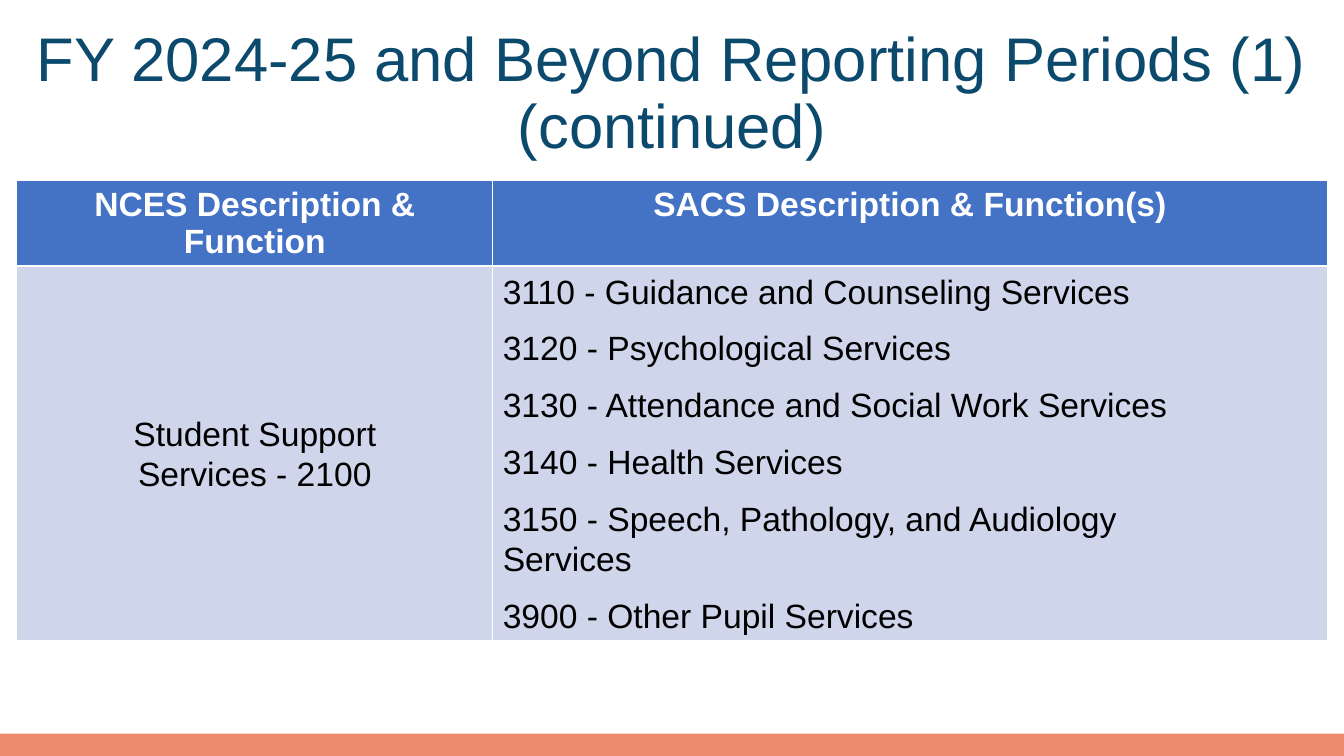
"""Build the slide that maps NCES student support to SACS functions."""
import pptx
import pptx.dml.color
import pptx.enum.shapes
import pptx.enum.text
import pptx.util

Pt = pptx.util.Pt
RGBColor = pptx.dml.color.RGBColor
ALIGN = pptx.enum.text.PP_ALIGN
ANCHOR = pptx.enum.text.MSO_ANCHOR

NAVY = RGBColor(0x0C, 0x4A, 0x6D)
CORAL = RGBColor(0xED, 0x8B, 0x6F)
BLUE = RGBColor(0x44, 0x72, 0xC4)
PALE = RGBColor(0xCF, 0xD5, 0xEA)
WHITE = RGBColor(0xFF, 0xFF, 0xFF)
BLACK = RGBColor(0x00, 0x00, 0x00)

WIDTH, HEIGHT = 960, 540
LEFT, SPAN = 12, 936
INDENT = 72

HEADS = ["NCES Description & Function", "SACS Description & Function(s)"]
SUPPORT = "Student Support Services - 2100"
DUTIES = [
    "3110 - Guidance and Counseling Services",
    "3120 - Psychological Services",
    "3130 - Attendance and Social Work Services",
    "3140 - Health Services",
    "3150 - Speech, Pathology, and Audiology Services",
    "3900 - Other Pupil Services",
]


def add_run(para, text, size, color, bold=False):
    run = para.add_run()
    run.text = text
    run.font.name = "Arial"
    run.font.size = Pt(size)
    run.font.bold = bold
    run.font.color.rgb = color


def add_bar(slide):
    bar = slide.shapes.add_shape(
        pptx.enum.shapes.MSO_SHAPE.RECTANGLE, Pt(0), Pt(524), Pt(WIDTH), Pt(16))
    bar.shadow.inherit = False
    bar.fill.solid()
    bar.fill.fore_color.rgb = CORAL
    bar.line.fill.background()


def set_title(slide, text):
    title = slide.shapes.title
    title.left, title.top = Pt(LEFT), Pt(16)
    title.width, title.height = Pt(SPAN), Pt(104)
    frame = title.text_frame
    frame.word_wrap = True
    frame.auto_size = pptx.enum.text.MSO_AUTO_SIZE.NONE
    frame.vertical_anchor = ANCHOR.MIDDLE
    para = frame.paragraphs[0]
    para.alignment = ALIGN.CENTER
    para.line_spacing = 0.9
    add_run(para, text, 44, NAVY)


def fill_cell(cell, lines, fill, color, align=ALIGN.CENTER, bold=False,
              spacing=1.0, after=0, left=0, right=0):
    cell.fill.solid()
    cell.fill.fore_color.rgb = fill
    frame = cell.text_frame
    for index, line in enumerate(lines):
        para = frame.add_paragraph() if index else frame.paragraphs[0]
        para.alignment = align
        para.line_spacing = spacing
        para.space_after = Pt(after)
        props = para._p.get_or_add_pPr()
        props.set("marL", str(Pt(left)))
        props.set("marR", str(Pt(right)))
        add_run(para, line, 24, color, bold)


def add_grid(slide):
    grid = slide.shapes.add_table(
        2, 2, Pt(LEFT), Pt(129), Pt(SPAN), Pt(328)).table
    for column, width in zip(grid.columns, (340, 596)):
        column.width = Pt(width)
    for row, height in zip(grid.rows, (61, 267)):
        row.height = Pt(height)
    for index, head in enumerate(HEADS):
        fill_cell(grid.cell(0, index), [head], BLUE, WHITE, bold=True)
    fill_cell(grid.cell(1, 0), [SUPPORT], PALE, BLACK, spacing=1.07,
              left=INDENT, right=INDENT)
    grid.cell(1, 0).vertical_anchor = ANCHOR.MIDDLE
    fill_cell(grid.cell(1, 1), DUTIES, PALE, BLACK, ALIGN.LEFT,
              spacing=1.07, after=12, right=INDENT)


def main():
    deck = pptx.Presentation()
    deck.slide_width, deck.slide_height = Pt(WIDTH), Pt(HEIGHT)
    slide = deck.slides.add_slide(deck.slide_layouts[5])
    add_bar(slide)
    set_title(slide, "FY 2024-25 and Beyond Reporting Periods (1) (continued)")
    add_grid(slide)
    deck.save("out.pptx")


if __name__ == "__main__":
    main()
